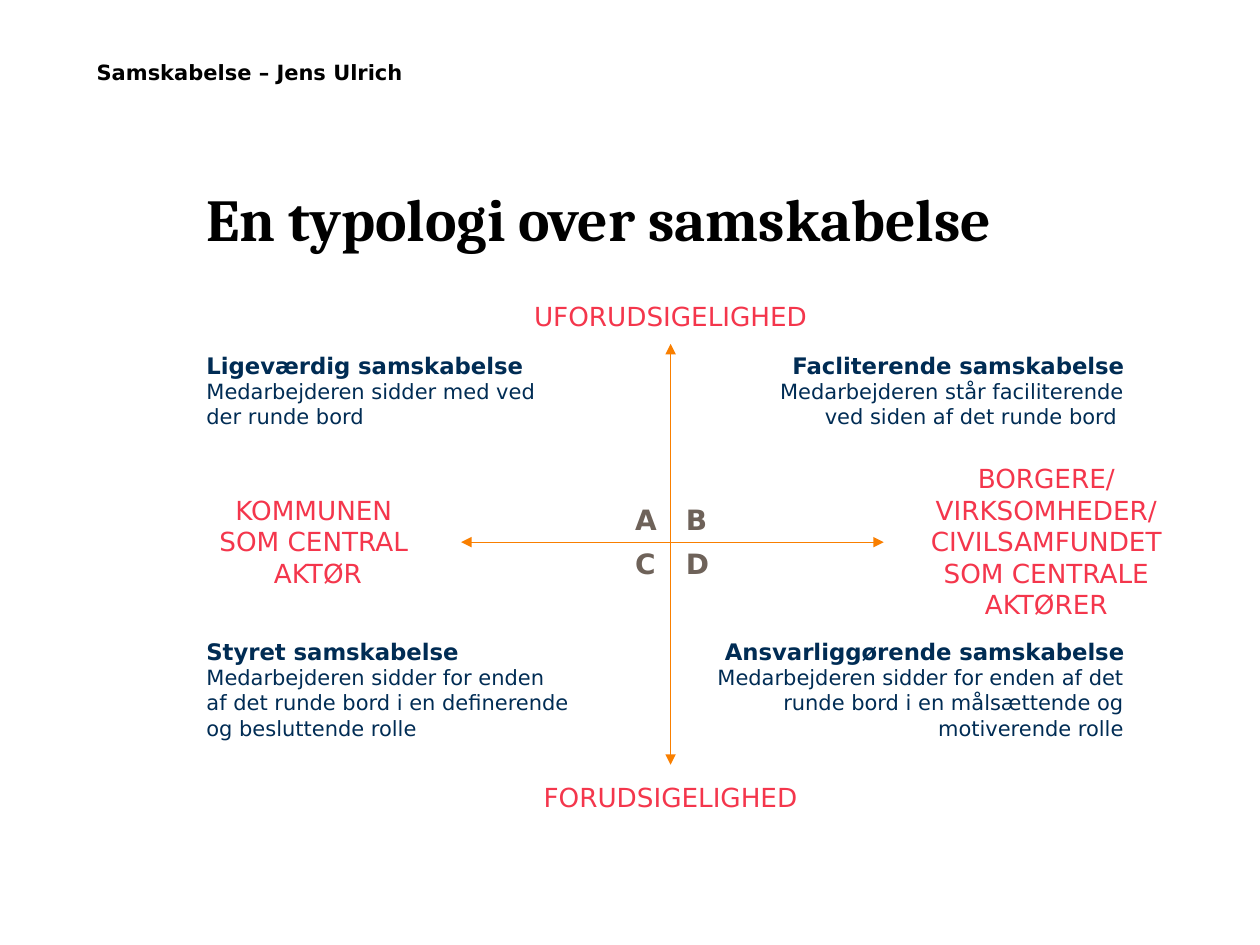
from lxml.etree import SubElement
from pptx import Presentation
from pptx.dml.color import RGBColor
from pptx.enum.shapes import MSO_CONNECTOR
from pptx.enum.text import MSO_ANCHOR, MSO_AUTO_SIZE, PP_ALIGN
from pptx.oxml.ns import qn
from pptx.util import Pt

BLACK = RGBColor(0x00, 0x00, 0x00)
RED = RGBColor(0xF4, 0x36, 0x4C)
NAVY = RGBColor(0x00, 0x2C, 0x54)
ORANGE = RGBColor(0xF9, 0x7F, 0x00)
BROWN = RGBColor(0x6E, 0x62, 0x59)
SANS = "DejaVu Sans"
SERIF = "Cambria"


def write_paragraph(paragraph, text, size, color, font=SANS, bold=False,
                    align=PP_ALIGN.LEFT, after=0, tab=None):
    properties = paragraph._p.get_or_add_pPr()
    if tab is not None:
        tabs = SubElement(properties, qn("a:tabLst"))
        SubElement(tabs, qn("a:tab"), pos=str(Pt(tab)), algn="l")
    paragraph.alignment = align
    paragraph.space_after = Pt(after)
    for index, line in enumerate(text.split("\n")):
        if index:
            paragraph.add_line_break()
        span = paragraph.add_run()
        span.text = line
        span.font.name = font
        span.font.size = Pt(size)
        span.font.bold = bold
        span.font.color.rgb = color


def add_text(page, left, top, width, height, paragraphs, anchor=MSO_ANCHOR.TOP, **style):
    box = page.shapes.add_textbox(Pt(left), Pt(top), Pt(width), Pt(height))
    frame = box.text_frame
    frame.word_wrap = True
    frame.auto_size = MSO_AUTO_SIZE.NONE
    frame.vertical_anchor = anchor
    for index, (text, extra) in enumerate(paragraphs):
        paragraph = frame.add_paragraph() if index else frame.paragraphs[0]
        write_paragraph(paragraph, text, **{**style, **extra})


def add_axis(page, start_x, start_y, end_x, end_y):
    axis = page.shapes.add_connector(
        MSO_CONNECTOR.STRAIGHT, Pt(start_x), Pt(start_y), Pt(end_x), Pt(end_y))
    axis.line.color.rgb = ORANGE
    axis.line.width = Pt(0.75)
    line = axis.line._get_or_add_ln()
    for end in ("a:headEnd", "a:tailEnd"):
        SubElement(line, qn(end), type="triangle")
    SubElement(axis._element.spPr, qn("a:effectLst"))


def add_header(page, left, top, width, height):
    add_text(page, left, top, width, height, [("Samskabelse – Jens Ulrich", {})],
             anchor=MSO_ANCHOR.MIDDLE, size=12, color=BLACK, bold=True)


def add_title(page, left, top, width, height):
    title = page.shapes.title
    title.left, title.top, title.width, title.height = map(Pt, (left, top, width, height))
    title.text_frame.vertical_anchor = MSO_ANCHOR.MIDDLE
    write_paragraph(title.text_frame.paragraphs[0], "En typologi over samskabelse",
                    size=34, color=BLACK, font=SERIF, bold=True)


def add_axes(page, left, top, width, height):
    center_x, center_y = left + 278.2, top + 141.8
    add_axis(page, center_x, top + 28.5, center_x, top + height - 31)
    add_axis(page, left + 400, center_y, left + 158.5, center_y)
    add_text(page, center_x - 27.4, center_y - 26, 58, 52,
             [("A\tB", {}), ("C\tD", {})],
             size=16, color=BROWN, bold=True, after=6, tab=29)


def add_axis_labels(page, left, top, width, height):
    side = 153.4
    middle = left + 278.2 - 92.2
    labels = [
        (middle, top, 184.4, 25.2, ["UFORUDSIGELIGHED"]),
        (middle, top + height - 25.2, 184.4, 25.2, ["FORUDSIGELIGHED"]),
        (left, top + 110.8, side, 62, ["KOMMUNEN \nSOM CENTRAL \nAKTØR"]),
        (left + width - side, top + 92.8, side, 98,
         ["BORGERE/", "VIRKSOMHEDER/\nCIVILSAMFUNDET SOM CENTRALE AKTØRER"]),
    ]
    for *place, texts in labels:
        add_text(page, *place, [(text, {}) for text in texts],
                 size=15, color=RED, align=PP_ALIGN.CENTER)


def add_quadrants(page, left, top, width, height):
    lower = top + 163.4
    right = left + width
    quadrants = [
        (left, top, 203.8, 52, PP_ALIGN.LEFT, "Ligeværdig samskabelse",
         "Medarbejderen sidder med ved der runde bord"),
        (right - 222.5, top, 222.5, 52, PP_ALIGN.RIGHT, "Facliterende samskabelse",
         "Medarbejderen står faciliterende ved siden af det runde bord "),
        (left, lower, 232.6, 67, PP_ALIGN.LEFT, "Styret samskabelse",
         "Medarbejderen sidder for enden \n"
         "af det runde bord i en definerende og besluttende rolle"),
        (right - 255, lower, 255, 67, PP_ALIGN.RIGHT, "Ansvarliggørende samskabelse",
         "Medarbejderen sidder for enden af det runde bord "
         "i en målsættende og motiverende rolle"),
    ]
    for *place, align, heading, body in quadrants:
        add_text(page, *place, [(heading, {"size": 13, "bold": True}), (body, {"size": 12})],
                 color=NAVY, align=align)


def main():
    deck = Presentation()
    deck.slide_width, deck.slide_height = Pt(720), Pt(540)
    page = deck.slides.add_slide(deck.slide_layouts[5])
    matrix = (105, 168, 569.6, 300)
    add_header(page, 48.2, 26, 612, 30)
    add_title(page, 110.9, 79.2, 550, 90)
    add_axis_labels(page, *matrix)
    add_quadrants(page, 110.9, 197.3, 538.4, 231)
    add_axes(page, *matrix)
    deck.save("out.pptx")


if __name__ == "__main__":
    main()
